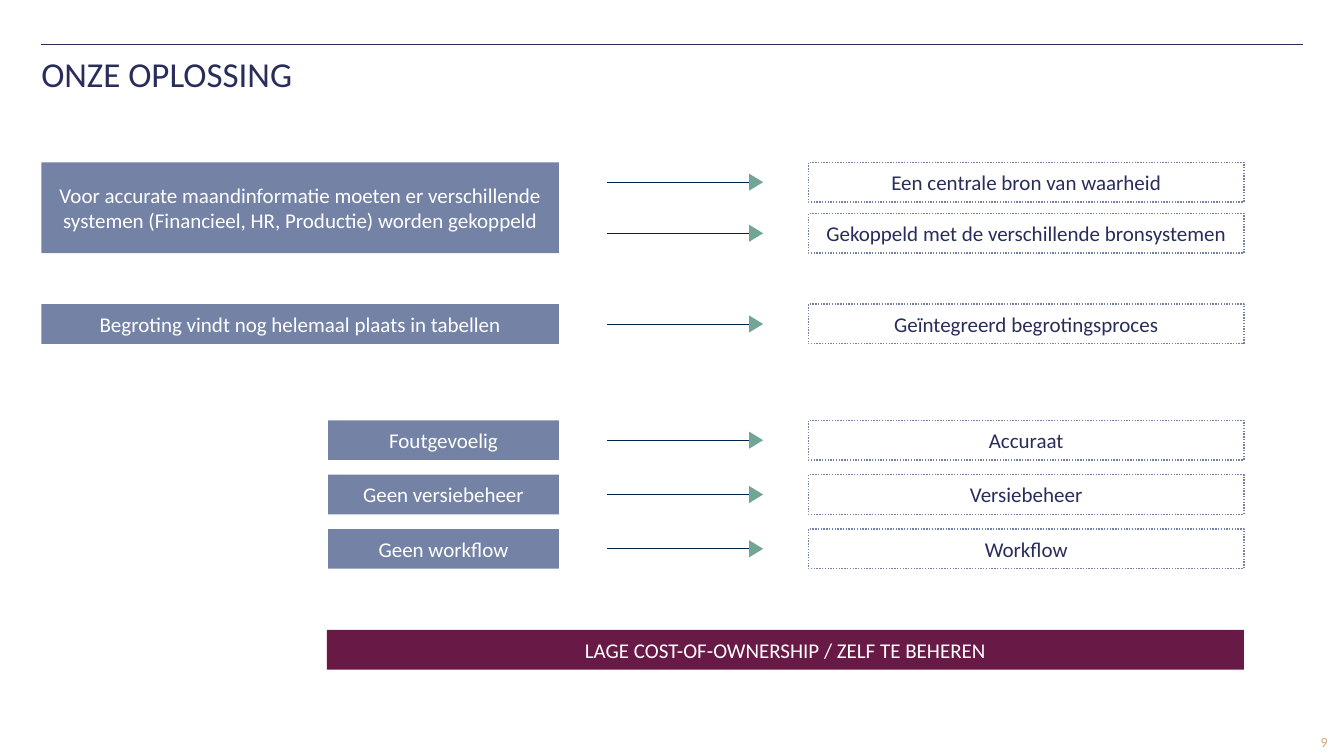
from lxml import etree
from pptx import Presentation
from pptx.dml.color import RGBColor
from pptx.enum.dml import MSO_LINE
from pptx.enum.shapes import MSO_CONNECTOR, MSO_SHAPE
from pptx.enum.text import MSO_ANCHOR, PP_ALIGN
from pptx.oxml.ns import qn
from pptx.util import Pt

NAVY = RGBColor(0x28, 0x2D, 0x5A)
INK = RGBColor(0x00, 0x24, 0x48)
SLATE = RGBColor(0x73, 0x82, 0xA5)
GREEN = RGBColor(0x73, 0xA5, 0x96)
WINE = RGBColor(0x69, 0x19, 0x46)
GOLD = RGBColor(0xD2, 0xAA, 0x73)
WHITE = RGBColor(0xFF, 0xFF, 0xFF)

STRAIGHT = MSO_CONNECTOR.STRAIGHT
RECTANGLE = MSO_SHAPE.RECTANGLE
TRIANGLE = MSO_SHAPE.ISOSCELES_TRIANGLE
DOTTED = MSO_LINE.ROUND_DOT
TOP, MIDDLE = MSO_ANCHOR.TOP, MSO_ANCHOR.MIDDLE
LEFT, CENTER, RIGHT = PP_ALIGN.LEFT, PP_ALIGN.CENTER, PP_ALIGN.RIGHT

MARGIN = 29.5
BOX_HEIGHT = 28.3
PROBLEM_RIGHT = 399.3
SOLUTION_LEFT = 577.5
SOLUTION_WIDTH = 311
SYSTEMS_TOP, SYSTEMS_STEP = 116, 36.5
BUDGET_TOP = 217.3
QUALITY_TOP, QUALITY_STEP = 300.3, 38.8
WIDE, NARROW = 369.8, 165


class SlideBuilder:
    font = "Calibri"
    body_size = 15

    def __init__(self, slide):
        self.slide = slide

    def set_text(self, shape, text, size, color, align, anchor, insets=(0, 0, 0, 0)):
        frame = shape.text_frame
        frame.word_wrap = True
        frame.vertical_anchor = anchor
        (frame.margin_left, frame.margin_top,
         frame.margin_right, frame.margin_bottom) = map(Pt, insets)
        paragraph = frame.paragraphs[0]
        paragraph.alignment = align
        run = paragraph.add_run()
        run.text = text
        run.font.name = self.font
        run.font.size = Pt(size)
        run.font.color.rgb = color
        return paragraph

    def label(self, bounds, *style):
        shape = self.slide.shapes.add_textbox(*map(Pt, bounds))
        return self.set_text(shape, *style)

    def box(self, left, top, width, text, fill, height=BOX_HEIGHT, outline=None, color=WHITE):
        shape = self.slide.shapes.add_shape(RECTANGLE, *map(Pt, (left, top, width, height)))
        shape.shadow.inherit = False
        shape.fill.solid()
        shape.fill.fore_color.rgb = fill
        if outline is None:
            shape.line.fill.background()
        else:
            shape.line.color.rgb = outline
            shape.line.width = Pt(1)
            shape.line.dash_style = DOTTED
        self.set_text(shape, text, self.body_size, color, CENTER, MIDDLE)

    def problem(self, top, width, text, height=BOX_HEIGHT):
        self.box(PROBLEM_RIGHT - width, top, width, text, SLATE, height)

    def solution(self, top, text):
        self.box(SOLUTION_LEFT, top, SOLUTION_WIDTH, text, WHITE, outline=SLATE, color=NAVY)

    def rule(self, shapes, left, right, y, color, width):
        connector = shapes.add_connector(STRAIGHT, Pt(left), Pt(y), Pt(right), Pt(y))
        connector.line.color.rgb = color
        connector.line.width = Pt(width)
        etree.SubElement(connector._element.spPr, qn("a:effectLst"))

    def arrow(self, y):
        shapes = self.slide.shapes.add_group_shape().shapes
        self.rule(shapes, 433.5, 535, y, INK, 0.5)
        head = shapes.add_shape(TRIANGLE, Pt(534), Pt(y - 5), Pt(12.2), Pt(10))
        head.rotation = 90
        head.shadow.inherit = False
        head.fill.solid()
        head.fill.fore_color.rgb = GREEN
        head.line.fill.background()


def main():
    presentation = Presentation()
    presentation.slide_width = Pt(960)
    presentation.slide_height = Pt(540)
    builder = SlideBuilder(presentation.slides.add_slide(presentation.slide_layouts[6]))

    builder.rule(builder.slide.shapes, MARGIN, 931, 31.7, NAVY, 1)
    title = builder.label((MARGIN, 32.4, 599, 48), "ONZE OPLOSSING", 25, NAVY,
                          LEFT, TOP, (0, 8.6, 7.2, 0))
    title.line_spacing = 0.9
    builder.label((908.6, 520.6, 44, 18.7), "9", 10, GOLD, RIGHT, MIDDLE, (4.3, 2.2, 4.3, 2.2))

    builder.problem(SYSTEMS_TOP, WIDE,
                    "Voor accurate maandinformatie moeten er verschillende systemen "
                    "(Financieel, HR, Productie) worden gekoppeld",
                    SYSTEMS_STEP + BOX_HEIGHT)
    builder.problem(BUDGET_TOP, WIDE, "Begroting vindt nog helemaal plaats in tabellen")
    quality_tops = [QUALITY_TOP + row * QUALITY_STEP for row in range(3)]
    for top, text in zip(quality_tops, ("Foutgevoelig", "Geen versiebeheer", "Geen workflow")):
        builder.problem(top, NARROW, text)

    solutions = (
        (SYSTEMS_TOP, "Een centrale bron van waarheid"),
        (SYSTEMS_TOP + SYSTEMS_STEP, "Gekoppeld met de verschillende bronsystemen"),
        (BUDGET_TOP, "Geïntegreerd begrotingsproces"),
        *zip(quality_tops, ("Accuraat", "Versiebeheer", "Workflow")),
    )
    for top, text in solutions:
        builder.arrow(top + BOX_HEIGHT / 2)
        builder.solution(top, text)

    builder.box(233.5, 450, 655, "LAGE COST-OF-OWNERSHIP / ZELF TE BEHEREN", WINE)
    presentation.save("out.pptx")


if __name__ == "__main__":
    main()
